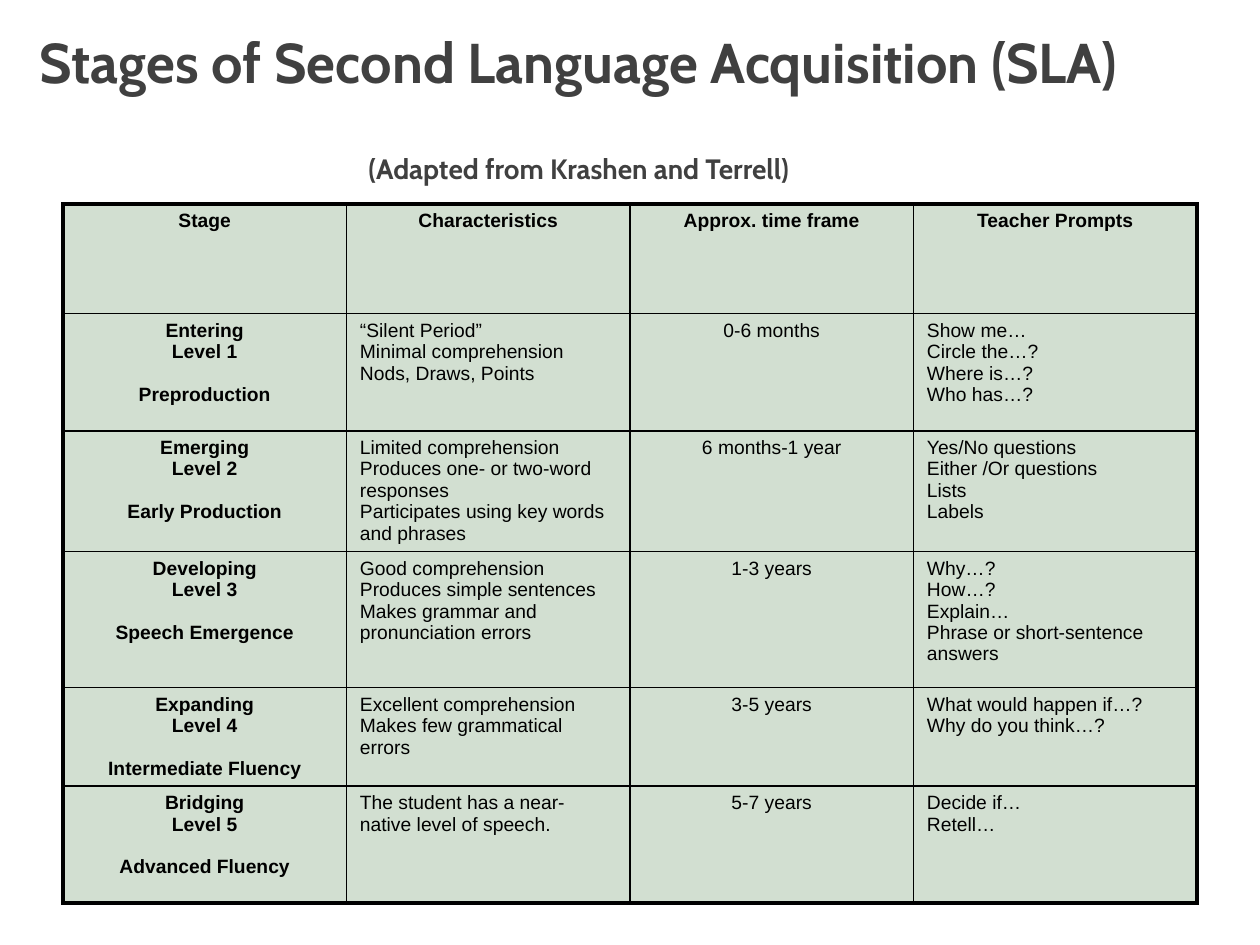
from lxml import etree
from pptx import Presentation
from pptx.dml.color import RGBColor
from pptx.enum.text import MSO_ANCHOR, MSO_AUTO_SIZE, PP_ALIGN
from pptx.oxml.ns import qn
from pptx.util import Pt

LEFT, CENTER = PP_ALIGN.LEFT, PP_ALIGN.CENTER
TITLE_ONLY = 5

HEADERS = ["Stage", "Characteristics", "Approx. time frame", "Teacher Prompts"]
# Each stage: name, fluency, characteristics, time frame, prompts
STAGES = [
    ("Entering", "Preproduction",
     ["“Silent Period”", "Minimal comprehension Nods, Draws, Points"],
     "0-6 months",
     ["Show me…", "Circle the…?", "Where is…?", "Who has…?"]),
    ("Emerging", "Early Production",
     ["Limited comprehension", "Produces one- or two-word responses",
      "Participates using key words and phrases"],
     "6 months-1 year",
     ["Yes/No questions", "Either /Or questions", "Lists", "Labels"]),
    ("Developing", "Speech Emergence",
     ["Good comprehension Produces simple sentences",
      "Makes grammar and pronunciation errors"],
     "1-3 years",
     ["Why…?", "How…?", "Explain…", "Phrase or short-sentence", "answers"]),
    ("Expanding", "Intermediate Fluency",
     ["Excellent comprehension", "Makes few grammatical errors"],
     "3-5 years",
     ["What would happen if…?", "Why do you think…?"]),
    ("Bridging", "Advanced Fluency",
     ["The student has a near-native level of speech."],
     "5-7 years",
     ["Decide if…", "Retell…"]),
]
ROW_HEIGHTS = [62.6, 67, 69, 77.8, 56, 67]


def rgb(value):
    return RGBColor.from_string(value)


def add_run(p, text, *, size, font, color, bold=False):
    r = p.add_run()
    r.text = text
    r.font.size = Pt(size)
    r.font.name = font
    r.font.bold = bold
    r.font.color.rgb = rgb(color)


class SlideBuilder:
    title_font, title_color = "Cabin", "404040"
    body_font, body_color, body_size = "Arial", "000000", 11
    cell_fill, line_color = "D2DFD1", "000000"
    inner_line, outer_line = 1, 2.25
    stage_gap = 12.2

    def __init__(self, prs):
        self.s = prs.slides.add_slide(prs.slide_layouts[TITLE_ONLY])

    def title(self, x, y, w, h, parts):
        sp = self.s.shapes.title
        sp.left, sp.top, sp.width, sp.height = Pt(x), Pt(y), Pt(w), Pt(h)
        tf = sp.text_frame
        tf.word_wrap = True
        tf.auto_size = MSO_AUTO_SIZE.NONE
        tf.vertical_anchor = MSO_ANCHOR.MIDDLE
        p = tf.paragraphs[0]
        p.alignment = CENTER
        p.line_spacing = Pt(52)
        for text, size in parts:
            add_run(p, text, size=size, font=self.title_font,
                    color=self.title_color, bold=True)

    def table(self, x, y, w, heights, rows):
        n_rows, n_cols = len(rows), len(rows[0])
        frame = self.s.shapes.add_table(n_rows, n_cols, Pt(x), Pt(y), Pt(w),
                                        Pt(sum(heights)))
        table = frame.table
        for column in table.columns:
            column.width = Pt(w / n_cols)
        for i, (height, row) in enumerate(zip(heights, rows)):
            table.rows[i].height = Pt(height)
            for j, lines in enumerate(row):
                cell = table.cell(i, j)
                self.borders(cell, L=j == 0, R=j == n_cols - 1,
                             T=i == 0, B=i == n_rows - 1)
                self.cell(cell, lines, bold=i == 0 or j == 0,
                          align=CENTER if i == 0 or j in (0, 2) else LEFT)

    def cell(self, cell, lines, *, bold, align):
        cell.fill.solid()
        cell.fill.fore_color.rgb = rgb(self.cell_fill)
        cell.margin_left = cell.margin_right = Pt(7.7)
        cell.margin_top = cell.margin_bottom = Pt(3.6)
        tf = cell.text_frame
        for k, text in enumerate(lines):
            p = tf.add_paragraph() if k else tf.paragraphs[0]
            p.alignment = align
            # The fluency name stands one line below the level
            if bold and k == 2:
                p.space_before = Pt(self.stage_gap)
            add_run(p, text, size=self.body_size, font=self.body_font,
                    color=self.body_color, bold=bold)

    def borders(self, cell, **outer):
        tcPr = cell._tc.get_or_add_tcPr()
        for side, is_outer in outer.items():
            width = self.outer_line if is_outer else self.inner_line
            ln = etree.SubElement(tcPr, qn(f"a:ln{side}"), w=str(int(Pt(width))))
            fill = etree.SubElement(ln, qn("a:solidFill"))
            etree.SubElement(fill, qn("a:srgbClr"), val=self.line_color)


def main():
    prs = Presentation()
    prs.slide_width, prs.slide_height = Pt(720), Pt(540)
    slide = SlideBuilder(prs)

    # Title with its source line
    slide.title(15, 18, 631.5, 72, [
        ("Stages of Second Language Acquisition (SLA) ", 32),
        ("(Adapted from Krashen and Terrell)", 16),
    ])

    # Table of stages
    rows = [[[header] for header in HEADERS]]
    for level, (name, fluency, traits, time, prompts) in enumerate(STAGES, 1):
        rows.append([[name, f"Level {level}", fluency], traits, [time], prompts])
    slide.table(36, 116.6, 648, ROW_HEIGHTS, rows)

    prs.save("out.pptx")


if __name__ == "__main__":
    main()
